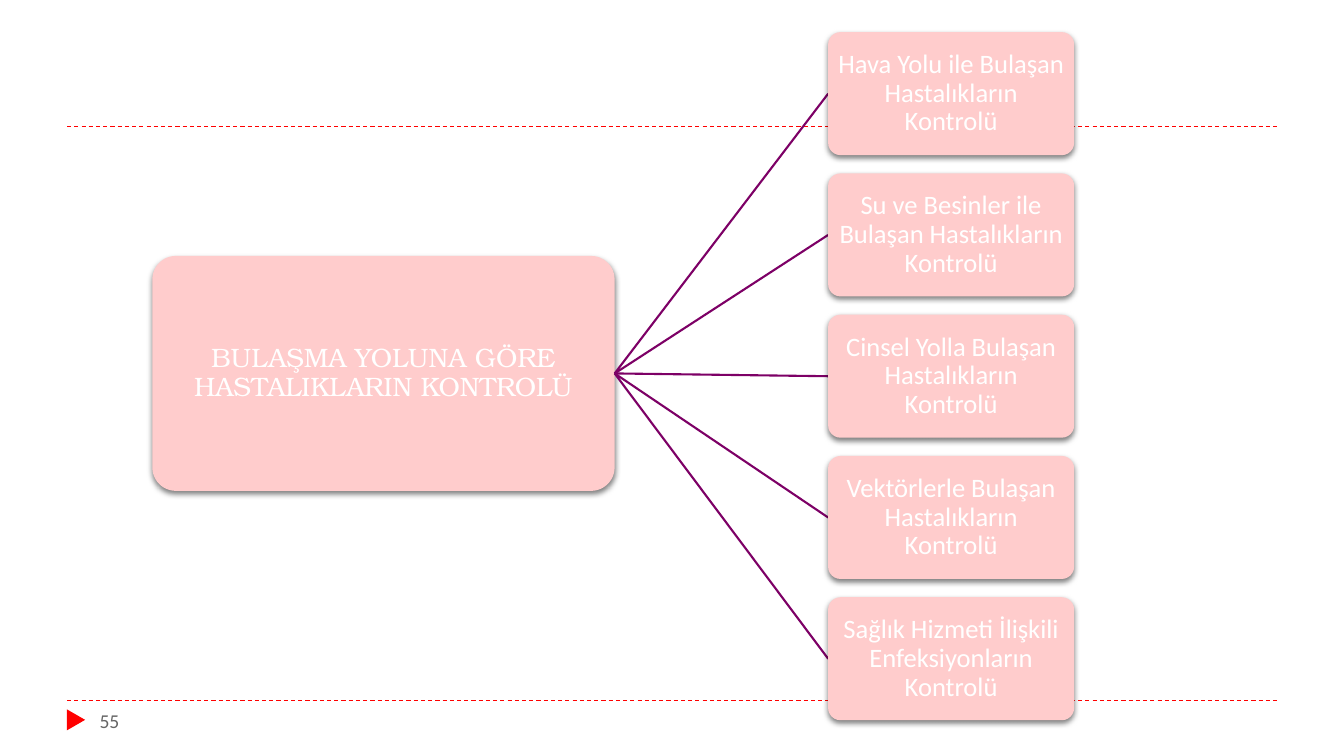
from lxml.etree import SubElement
from pptx import Presentation
from pptx.dml.color import RGBColor
from pptx.enum.dml import MSO_LINE
from pptx.enum.shapes import MSO_CONNECTOR, MSO_SHAPE
from pptx.enum.text import MSO_ANCHOR, PP_ALIGN
from pptx.oxml.ns import qn
from pptx.util import Cm, Pt

HUES = {"rule": "FF0000", "box": "FFCCCC", "link": "7D0066",
        "text": "FFFFFF", "page": "666666", "shade": "000000"}


def add_line(x1, y1, x2, y2, hue, width):
    line = slide.shapes.add_connector(
        MSO_CONNECTOR.STRAIGHT, Cm(x1), Cm(y1), Cm(x2), Cm(y2))
    line.line.color.rgb = RGBColor.from_string(HUES[hue])
    line.line.width = Pt(width)
    SubElement(line._element.spPr, qn("a:effectLst"))
    return line


def add_box(x, y, w, h, words, font):
    box = slide.shapes.add_shape(
        MSO_SHAPE.ROUNDED_RECTANGLE, Cm(x), Cm(y), Cm(w), Cm(h))
    box.adjustments[0] = 0.1
    box.fill.solid()
    box.fill.fore_color.rgb = RGBColor.from_string(HUES["box"])
    box.line.fill.background()
    box.shadow.inherit = False
    glow = SubElement(
        box._element.spPr.find(qn("a:effectLst")), qn("a:outerShdw"),
        blurRad=str(Pt(4)), dist=str(Pt(2)), dir="5400000", rotWithShape="0")
    shade = SubElement(glow, qn("a:srgbClr"), val=HUES["shade"])
    SubElement(shade, qn("a:alpha"), val="50000")
    frame = box.text_frame
    frame.word_wrap = True
    frame.vertical_anchor = MSO_ANCHOR.MIDDLE
    frame.margin_left = frame.margin_right = Cm(0.1)
    frame.margin_top = frame.margin_bottom = Cm(0.1)
    para = frame.paragraphs[0]
    para.alignment = PP_ALIGN.CENTER
    para.line_spacing = 0.9
    run = para.add_run()
    run.text = words
    run.font.name = font
    run.font.size = Pt(19)
    run.font.color.rgb = RGBColor.from_string(HUES["text"])


deck = Presentation()
deck.slide_width = Cm(33.87)
deck.slide_height = Cm(19.05)
slide = deck.slides.add_slide(deck.slide_layouts[6])

for y in (17.65, 3.18):
    rule = add_line(1.69, y, 32.18, y, "rule", 0.75)
    rule.line.dash_style = MSO_LINE.DASH

mark = slide.shapes.add_shape(
    MSO_SHAPE.ISOSCELES_TRIANGLE, Cm(1.65), Cm(17.91), Cm(0.53), Cm(0.46))
mark.rotation = 90
mark.fill.solid()
mark.fill.fore_color.rgb = RGBColor.from_string(HUES["rule"])
mark.line.fill.background()
mark.shadow.inherit = False

hub_x, hub_y, hub_w, hub_h = 3.84, 6.45, 11.65, 5.92
add_box(hub_x, hub_y, hub_w, hub_h,
        "BULAŞMA YOLUNA GÖRE HASTALIKLARIN KONTROLÜ", "TeX Gyre Bonum")

topics = [
    "Hava Yolu ile Bulaşan Hastalıkların Kontrolü",
    "Su ve Besinler ile Bulaşan Hastalıkların Kontrolü",
    "Cinsel Yolla Bulaşan Hastalıkların Kontrolü",
    "Vektörlerle Bulaşan Hastalıkların Kontrolü",
    "Sağlık Hizmeti İlişkili Enfeksiyonların Kontrolü",
]
left, top, wide, high, step = 20.87, 0.81, 6.2, 3.1, 3.56
for i, topic in enumerate(topics):
    y = top + i * step
    add_line(hub_x + hub_w, hub_y + hub_h / 2, left, y + high / 2, "link", 1.5)
    add_box(left, y, wide, high, topic, "Calibri")

page = slide.shapes.add_textbox(Cm(2.26), Cm(17.65), Cm(7.34), Cm(1.02))
page.text_frame.word_wrap = True
page.text_frame.vertical_anchor = MSO_ANCHOR.MIDDLE
run = page.text_frame.paragraphs[0].add_run()
run.text = "55"
run.font.name = "Calibri"
run.font.size = Pt(14)
run.font.color.rgb = RGBColor.from_string(HUES["page"])

deck.save("out.pptx")
